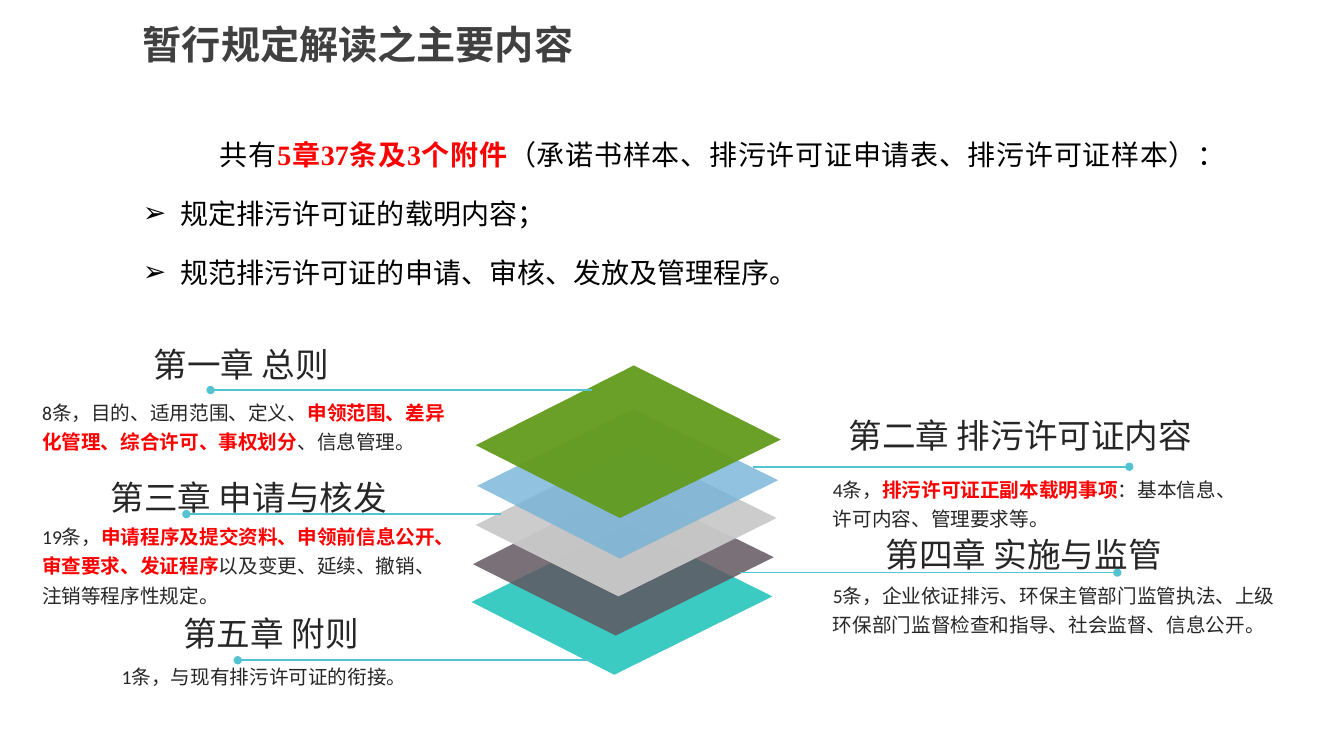
from lxml import etree
from pptx import Presentation
from pptx.dml import color as dml
from pptx.enum import lang, shapes, text
from pptx.oxml import ns
from pptx.util import Pt

COLORS = {"title": "404040", "ink": "262626", "black": "000000",
          "red": "FF0000", "line": "54C3D1", "teal": "30C8C0",
          "purple": "61555E", "grey": "CACACA", "blue": "73B2D7",
          "green": "629B1D"}
CJK = "Noto Sans CJK SC"
LEFT, CENTER, RIGHT, JUSTIFY = (text.PP_ALIGN.LEFT, text.PP_ALIGN.CENTER,
                                text.PP_ALIGN.RIGHT, text.PP_ALIGN.JUSTIFY)


def write(p, content, size=14, font="Calibri", color="ink", bold=False,
          align=LEFT, spacing=1.0, before=0):
    """Fill a paragraph; the parts between asterisks are red and bold."""
    p.alignment, p.line_spacing, p.space_before = align, spacing, Pt(before)
    for i, part in enumerate(content.split("*")):
        r = p.add_run()
        r.text = part
        f = r.font
        f.size, f.bold, f.name = Pt(size), bold or i % 2 == 1, font
        f.language_id = lang.MSO_LANGUAGE_ID.SIMPLIFIED_CHINESE
        f.color.rgb = dml.RGBColor.from_string(COLORS["red" if i % 2 else color])
        etree.SubElement(r._r.get_or_add_rPr(), ns.qn("a:ea"), typeface=CJK)


def place(sp, x, y, w, h, anchor=text.MSO_ANCHOR.TOP):
    """Position a text shape and return its text frame."""
    sp.left, sp.top, sp.width, sp.height = Pt(x), Pt(y), Pt(w), Pt(h)
    tf = sp.text_frame
    tf.word_wrap, tf.auto_size = True, text.MSO_AUTO_SIZE.NONE
    tf.vertical_anchor = anchor
    return tf


prs = Presentation()
prs.slide_width, prs.slide_height = Pt(960.5), Pt(540)
s = prs.slides.add_slide(prs.slide_layouts[1])
for sp in list(s.placeholders)[2:]:
    sp.element.getparent().remove(sp.element)

# Title
tf = place(s.shapes.title, 8.6, 10.8, 494.6, 41, text.MSO_ANCHOR.MIDDLE)
write(tf.paragraphs[0], "暂行规定解读之主要内容", size=28, font=CJK,
      color="title", bold=True, align=CENTER)

# Summary list
tf = place(s.placeholders[1], 95, 82.8, 768.2, 165)
summary = ["共有*5章37条及3个附件*（承诺书样本、排污许可证申请表、排污许可证样本）：",
           "规定排污许可证的载明内容；",
           "规范排污许可证的申请、审核、发放及管理程序。"]
for i, line in enumerate(summary):
    p = tf.paragraphs[0] if i == 0 else tf.add_paragraph()
    pPr = p._p.get_or_add_pPr()
    margin, indent = (27, -27) if i else (0, 55)
    pPr.set("marL", str(Pt(margin)))
    pPr.set("indent", str(Pt(indent)))
    if i:
        etree.SubElement(pPr, ns.qn("a:buChar"), char="➢")
    else:
        etree.SubElement(pPr, ns.qn("a:buNone"))
    write(p, line, size=20, font="Times New Roman", color="black",
          align=JUSTIFY, spacing=1.5, before=6 if i else 0)

# Stacked tiles, bottom to top: left corner, size, colour, opacity in percent
CORNERS = [(0, 0.52), (0.52, 0), (1, 0.48), (0.475, 1)]
TILES = [(337.2, 374.6, 215.2, 107.3, "teal", 94),
         (337.5, 346.8, 215.2, 107.3, "purple", 84),
         (339.6, 318.9, 215.2, 107.3, "grey", 95),
         (341, 291.7, 215.2, 107.3, "blue", 78),
         (339.6, 261, 218.1, 109.4, "green", 95)]
for x, y, w, h, color, opacity in TILES:
    points = [(x + w * cx, y + h * cy) for cx, cy in CORNERS]
    fb = s.shapes.build_freeform(*points[0], scale=Pt(1))
    fb.add_line_segments(points[1:], close=True)
    tile = fb.convert_to_shape()
    tile.shadow.inherit = False
    tile.line.fill.background()
    tile.fill.solid()
    tile.fill.fore_color.rgb = dml.RGBColor.from_string(COLORS[color])
    for clr in tile.element.spPr.iter(ns.qn("a:srgbClr")):
        etree.SubElement(clr, ns.qn("a:alpha"), val=str(opacity * 1000))

# Chapters: heading, its box and alignment, rule (y, from, to),
# details, their box and line spacing
CHAPTERS = [
    ("第一章 总则", (89.3, 241.9, 166.3), CENTER, (278.6, 150.5, 423.4),
     ["8条，目的、适用范围、定义、*申领范围、差异化管理、综合许可、事权划分*、信息管理。"],
     (23, 306), 1.25),
    ("第二章 排污许可证内容", (571, 293, 288), RIGHT, (333.4, 807.1, 537.8),
     ["4条，*排污许可证正副本载明事项*：基本信息、", "许可内容、管理要求等。"],
     (588.2, 297.4), 1.25),
    ("第三章 申请与核发", (72, 337, 221.8), LEFT, (367.2, 133.2, 357.8),
     ["19条，*申请程序及提交资料、申领前信息公开、审查要求、发证程序*"
      "以及变更、延续、撤销、注销等程序性规定。"],
     (23, 306), 1.25),
    ("第四章 实施与监管", (597.6, 378, 267.8), CENTER, (409, 798.5, 528.5),
     ["5条，企业依证排污、环保主管部门监管执法、上级环保部门监督检查和指导、"
      "社会监督、信息公开。"],
     (588.2, 341.3), 1.25),
    ("第五章 附则", (83.5, 434.2, 220.3), CENTER, (471.6, 169.9, 423.4),
     ["1条，与现有排污许可证的衔接。"], (79.9, 228.2), 1.0),
]
for heading, (hx, hy, hw), align, (y, x1, x2), details, (dx, dw), spacing in CHAPTERS:
    rule = s.shapes.add_connector(shapes.MSO_CONNECTOR.STRAIGHT,
                                  Pt(x1), Pt(y), Pt(x2), Pt(y))
    rule.line.width = Pt(1.25)
    rule.line.color.rgb = dml.RGBColor.from_string(COLORS["line"])
    etree.SubElement(rule.line._get_or_add_ln(), ns.qn("a:headEnd"), type="oval")
    etree.SubElement(rule.element.spPr, ns.qn("a:effectLst"))

    tf = place(s.shapes.add_textbox(0, 0, 0, 0), hx, hy, hw, 36)
    write(tf.paragraphs[0], heading, size=24, align=align)

    tf = place(s.shapes.add_textbox(0, 0, 0, 0), dx, y, dw, 49)
    for i, line in enumerate(details):
        p = tf.paragraphs[0] if i == 0 else tf.add_paragraph()
        write(p, line, spacing=spacing)

prs.save("out.pptx")
